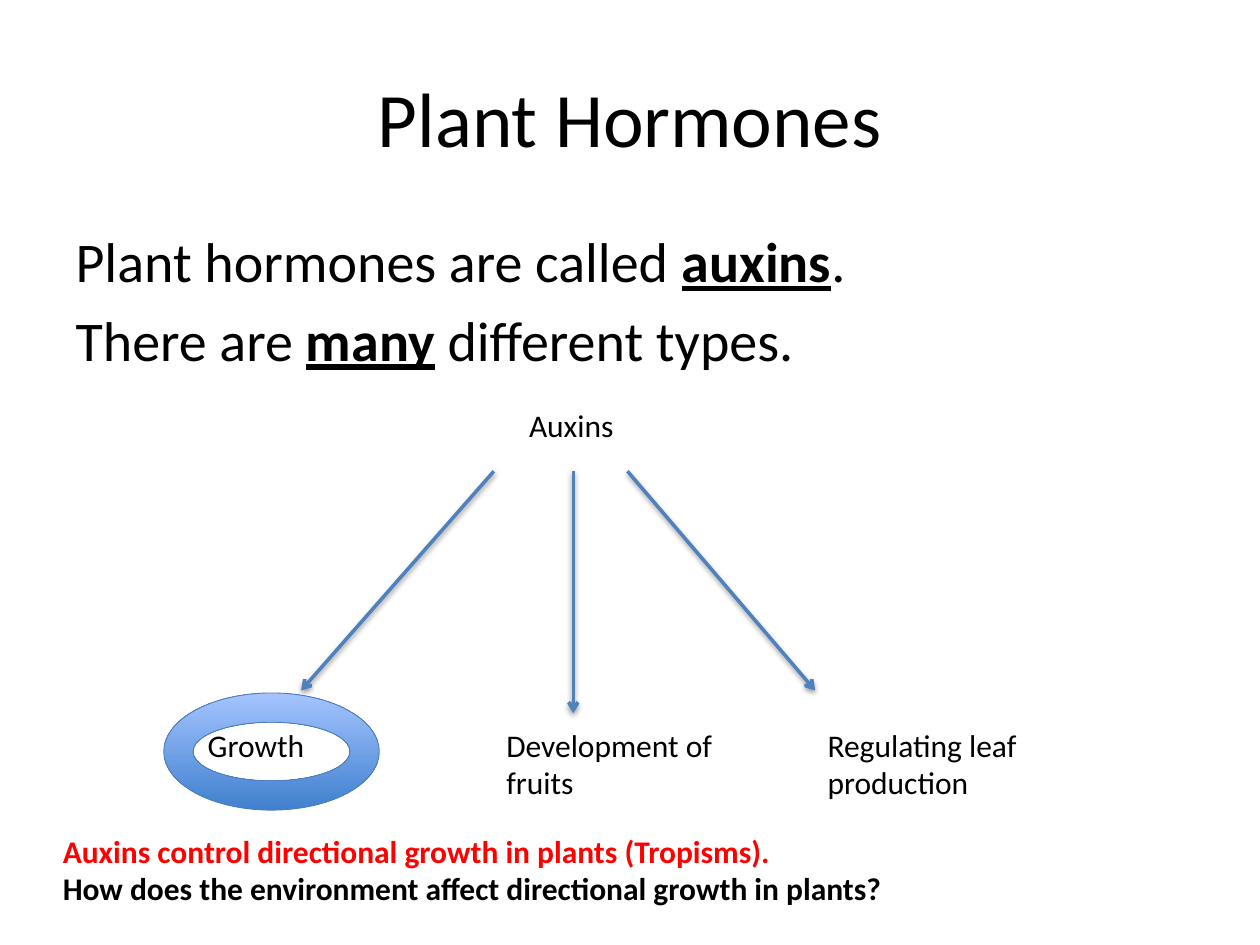
from lxml import etree
from pptx import Presentation
from pptx.dml.color import RGBColor
from pptx.enum.shapes import MSO_CONNECTOR, MSO_SHAPE
from pptx.enum.text import MSO_ANCHOR, MSO_AUTO_SIZE, PP_ALIGN
from pptx.oxml.ns import qn
from pptx.util import Inches, Pt

CENTER = PP_ALIGN.CENTER
MIDDLE = MSO_ANCHOR.MIDDLE
FIT_SHAPE = MSO_AUTO_SIZE.SHAPE_TO_FIT_TEXT
STRAIGHT = MSO_CONNECTOR.STRAIGHT
DONUT = MSO_SHAPE.DONUT

COLORS = {
    "text": "000000",
    "highlight": "FF0000",
    "arrow": "4F81BD",
    "ring_line": "4B7EBC",
    "ring_bottom": "3F80CE",
    "ring_top": "A4C4FF",
}
TITLE = {"size": Pt(44)}
BODY = {"size": Pt(32)}
KEYWORD = {"size": Pt(32), "bold": True, "underline": True}
LABEL = {"size": Pt(18)}
STRONG = {"size": Pt(18), "bold": True}


def color(name):
    return RGBColor.from_string(COLORS[name])


def place(shape, box):
    for name, value in zip(("left", "top", "width", "height"), box):
        setattr(shape, name, Inches(value))


def add_run(paragraph, text, font_format, color_name="text"):
    run = paragraph.add_run()
    run.text = text
    for name, value in {"name": "Calibri", **font_format}.items():
        setattr(run.font, name, value)
    run.font.color.rgb = color(color_name)


def fill_paragraphs(text_frame, paragraphs):
    for index, runs in enumerate(paragraphs):
        paragraph = text_frame.paragraphs[0] if index == 0 else text_frame.add_paragraph()
        for run in runs:
            add_run(paragraph, *run)


def fill_title(slide):
    title = slide.shapes.title
    place(title, (0.5, 0.3, 9, 1.25))
    title.text_frame.vertical_anchor = MIDDLE
    fill_paragraphs(title.text_frame, [[("Plant Hormones", TITLE)]])
    title.text_frame.paragraphs[0].alignment = CENTER


def fill_body(slide):
    body = slide.placeholders[1]
    place(body, (0.5, 1.75, 9, 1.63))
    fill_paragraphs(body.text_frame, [
        [("Plant hormones are called ", BODY), ("auxins", KEYWORD), (".", BODY)],
        [("There are ", BODY), ("many", KEYWORD), (" different types.", BODY)],
    ])
    for paragraph in body.text_frame.paragraphs:
        properties = paragraph._p.get_or_add_pPr()
        properties.set("marL", "0")
        properties.set("indent", "0")
        etree.SubElement(properties, qn("a:buNone"))


def add_text(slide, box, paragraphs, wrap=True):
    shape = slide.shapes.add_textbox(*map(Inches, box))
    shape.text_frame.word_wrap = wrap
    shape.text_frame.auto_size = FIT_SHAPE
    fill_paragraphs(shape.text_frame, paragraphs)


def add_arrow(slide, start, end):
    arrow = slide.shapes.add_connector(STRAIGHT, *map(Inches, start + end))
    arrow.line.color.rgb = color("arrow")
    arrow.line.width = Pt(2)
    properties = arrow._element.spPr
    etree.SubElement(properties.find(qn("a:ln")), qn("a:tailEnd"), type="arrow")
    effects = etree.SubElement(properties, qn("a:effectLst"))
    shadow = etree.SubElement(effects, qn("a:outerShdw"), blurRad="40000",
                              dist="20000", dir="5400000", rotWithShape="0")
    shade = etree.SubElement(shadow, qn("a:srgbClr"), val=COLORS["text"])
    etree.SubElement(shade, qn("a:alpha"), val="38000")


def add_ring(slide, box):
    ring = slide.shapes.add_shape(DONUT, *map(Inches, box))
    ring.shadow.inherit = False
    ring.fill.gradient()
    ring.fill.gradient_angle = 90
    for stop, position, name in zip(ring.fill.gradient_stops, (0, 1), ("ring_bottom", "ring_top")):
        stop.position = position
        stop.color.rgb = color(name)
    ring.line.color.rgb = color("ring_line")
    ring.line.width = Pt(0.5)


def main():
    presentation = Presentation()
    presentation.slide_width = Inches(10)
    presentation.slide_height = Inches(7.5)
    slide = presentation.slides.add_slide(presentation.slide_layouts[1])

    fill_title(slide)
    fill_body(slide)
    add_text(slide, (4.1, 3.17, 1.05, 0.4), [[("Auxins", LABEL)]], wrap=False)

    for start_x, end_x, end_y in ((3.92, 2.39, 5.48), (4.55, 4.55, 5.66), (4.98, 6.47, 5.48)):
        add_arrow(slide, (start_x, 3.74), (end_x, end_y))

    for text, left, width, height, wrap in (
        ("Growth", 1.55, 1.09, 0.4, False),
        ("Development of fruits", 3.92, 1.97, 0.71, True),
        ("Regulating leaf production", 6.47, 2.07, 0.71, True),
    ):
        add_text(slide, (left, 5.71, width, height), [[(text, LABEL)]], wrap)

    add_ring(slide, (1.3, 5.5, 1.71, 0.93))
    add_text(slide, (0.4, 6.55, 8.78, 0.71), [
        [("Auxins control directional growth in plants (Tropisms).", STRONG, "highlight")],
        [("How does the environment affect directional growth in plants?", STRONG)],
    ])
    presentation.save("out.pptx")


if __name__ == "__main__":
    main()
